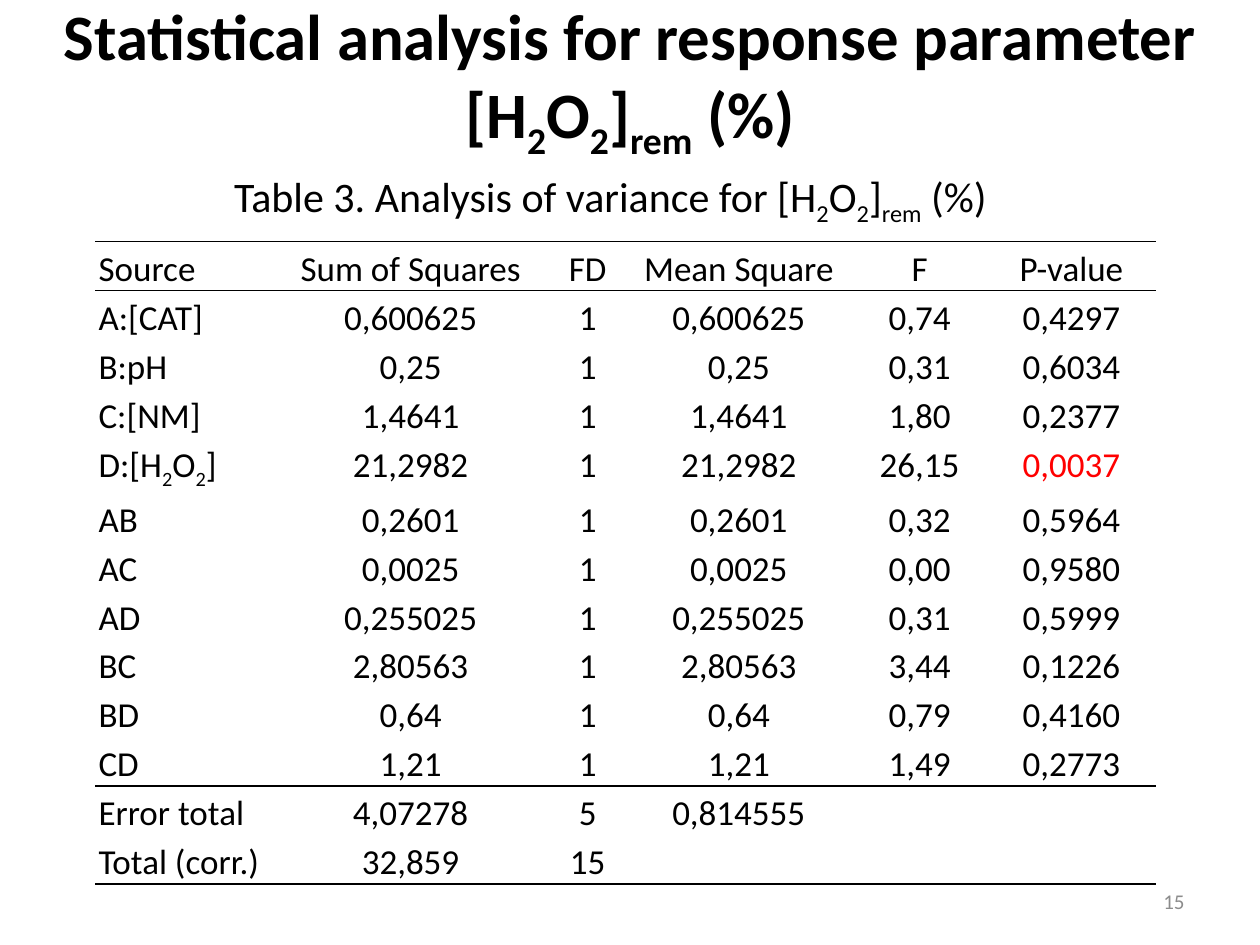
from lxml import etree
from pptx import Presentation
from pptx.dml.color import RGBColor
from pptx.enum.text import MSO_ANCHOR, PP_ALIGN
from pptx.oxml.ns import qn
from pptx.util import Pt

LEFT, CENTER, RIGHT = PP_ALIGN.LEFT, PP_ALIGN.CENTER, PP_ALIGN.RIGHT
MIDDLE, TOP = MSO_ANCHOR.MIDDLE, MSO_ANCHOR.TOP
FONT = "Calibri"
BLACK, RED, GREY = "000000", "FF0000", "8C8C8C"

COLUMN_WIDTHS = [100.8, 159.1, 43.2, 129.6, 77, 96.5]
ROW_HEIGHT = 28
RULED_EDGES = {0, 1, 11, 13}  # row boundaries that carry a line
SIGNIFICANT = "0,0037"
VARIANCE = [
    ["Source", "Sum of Squares", "FD", "Mean Square", "F", "P-value"],
    ["A:[CAT]", "0,600625", "1", "0,600625", "0,74", "0,4297"],
    ["B:pH", "0,25", "1", "0,25", "0,31", "0,6034"],
    ["C:[NM]", "1,4641", "1", "1,4641", "1,80", "0,2377"],
    ["D:[H_2_O_2_]", "21,2982", "1", "21,2982", "26,15", SIGNIFICANT],
    ["AB", "0,2601", "1", "0,2601", "0,32", "0,5964"],
    ["AC", "0,0025", "1", "0,0025", "0,00", "0,9580"],
    ["AD", "0,255025", "1", "0,255025", "0,31", "0,5999"],
    ["BC", "2,80563", "1", "2,80563", "3,44", "0,1226"],
    ["BD", "0,64", "1", "0,64", "0,79", "0,4160"],
    ["CD", "1,21", "1", "1,21", "1,49", "0,2773"],
    ["Error total", "4,07278", "5", "0,814555", "", ""],
    ["Total (corr.)", "32,859", "15", "", "", ""],
]


def color(hex_value):
    return RGBColor.from_string(hex_value)


def write(frame, text, size=20, fill=BLACK, bold=False, align=LEFT, spacing=None):
    """Fill the frame with one paragraph; text between underscores is subscript."""
    para = frame.paragraphs[0]
    para.alignment = align
    para.line_spacing = spacing
    for index, piece in enumerate(text.split("_")):
        if not piece:
            continue
        span = para.add_run()
        span.text = piece
        span.font.name = FONT
        span.font.size = Pt(size)
        span.font.bold = bold
        span.font.color.rgb = color(fill)
        if index % 2:
            span._r.get_or_add_rPr().set("baseline", "-25000")


def add_text(page, box, text, wrap=True, **text_format):
    frame = page.shapes.add_textbox(*map(Pt, box)).text_frame
    frame.word_wrap = wrap
    frame.vertical_anchor = MIDDLE
    write(frame, text, **text_format)


def set_borders(cell, ruled_sides):
    """Draw a black line on each ruled side and none on the others."""
    properties = cell._tc.get_or_add_tcPr()
    for side in "LRTB":
        line = etree.SubElement(properties, qn(f"a:ln{side}"), w=str(Pt(1)))
        if side in ruled_sides:
            fill = etree.SubElement(line, qn("a:solidFill"))
            etree.SubElement(fill, qn("a:srgbClr"), val=BLACK)
        else:
            etree.SubElement(line, qn("a:noFill"))


def add_variance_table(page, left, top):
    shape = page.shapes.add_table(
        len(VARIANCE), len(COLUMN_WIDTHS), Pt(left), Pt(top),
        Pt(sum(COLUMN_WIDTHS)), Pt(ROW_HEIGHT * len(VARIANCE)))
    table = shape.table
    table.first_row = table.horz_banding = False
    for column, width in zip(table.columns, COLUMN_WIDTHS):
        column.width = Pt(width)
    for row_index, values in enumerate(VARIANCE):
        table.rows[row_index].height = Pt(ROW_HEIGHT)
        sides = ("T" if row_index in RULED_EDGES else "") + (
            "B" if row_index + 1 in RULED_EDGES else "")
        for column_index, value in enumerate(values):
            cell = table.cell(row_index, column_index)
            cell.margin_left = cell.margin_right = Pt(2)
            cell.margin_top = cell.margin_bottom = Pt(0)
            cell.vertical_anchor = TOP
            set_borders(cell, sides)
            cell.fill.background()
            write(cell.text_frame, value, spacing=1.15,
                  align=CENTER if column_index else LEFT,
                  fill=RED if value == SIGNIFICANT else BLACK)


def main():
    deck = Presentation()
    deck.slide_width, deck.slide_height = Pt(720), Pt(540)
    page = deck.slides.add_slide(deck.slide_layouts[6])
    add_text(page, (516, 500.4, 168, 28.8), "15", size=12, fill=GREY, align=RIGHT)
    add_variance_table(page, 54.3, 138)
    add_text(page, (0, 0, 720, 90),
             "Statistical analysis for response parameter [H_2_O_2_]_rem_ (%)",
             size=37, bold=True, align=CENTER)
    add_text(page, (126.7, 95.8, 467.3, 36),
             "Table 3. Analysis of variance for [H_2_O_2_]_rem_ (%)",
             size=24, wrap=False)
    deck.save("out.pptx")


if __name__ == "__main__":
    main()
